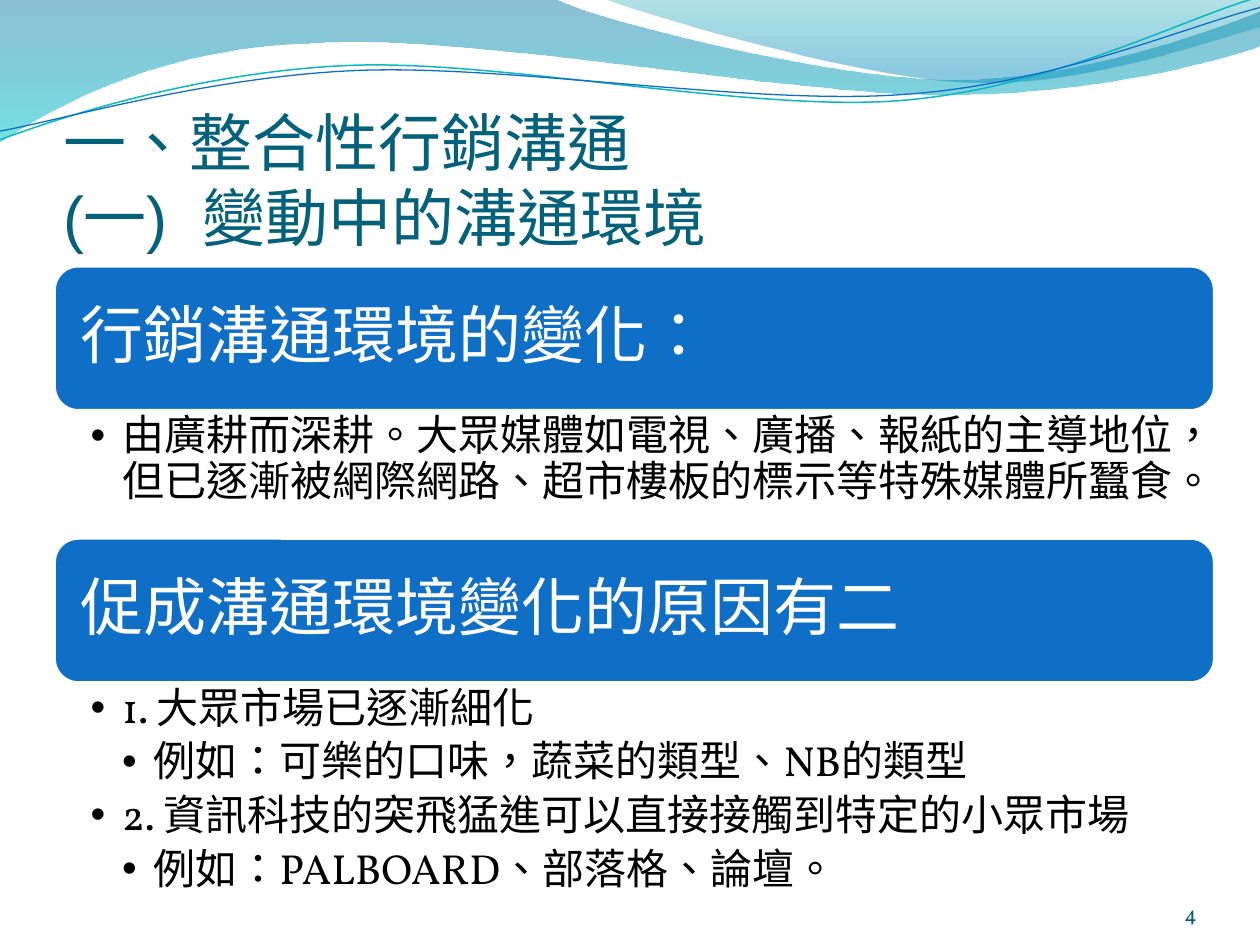
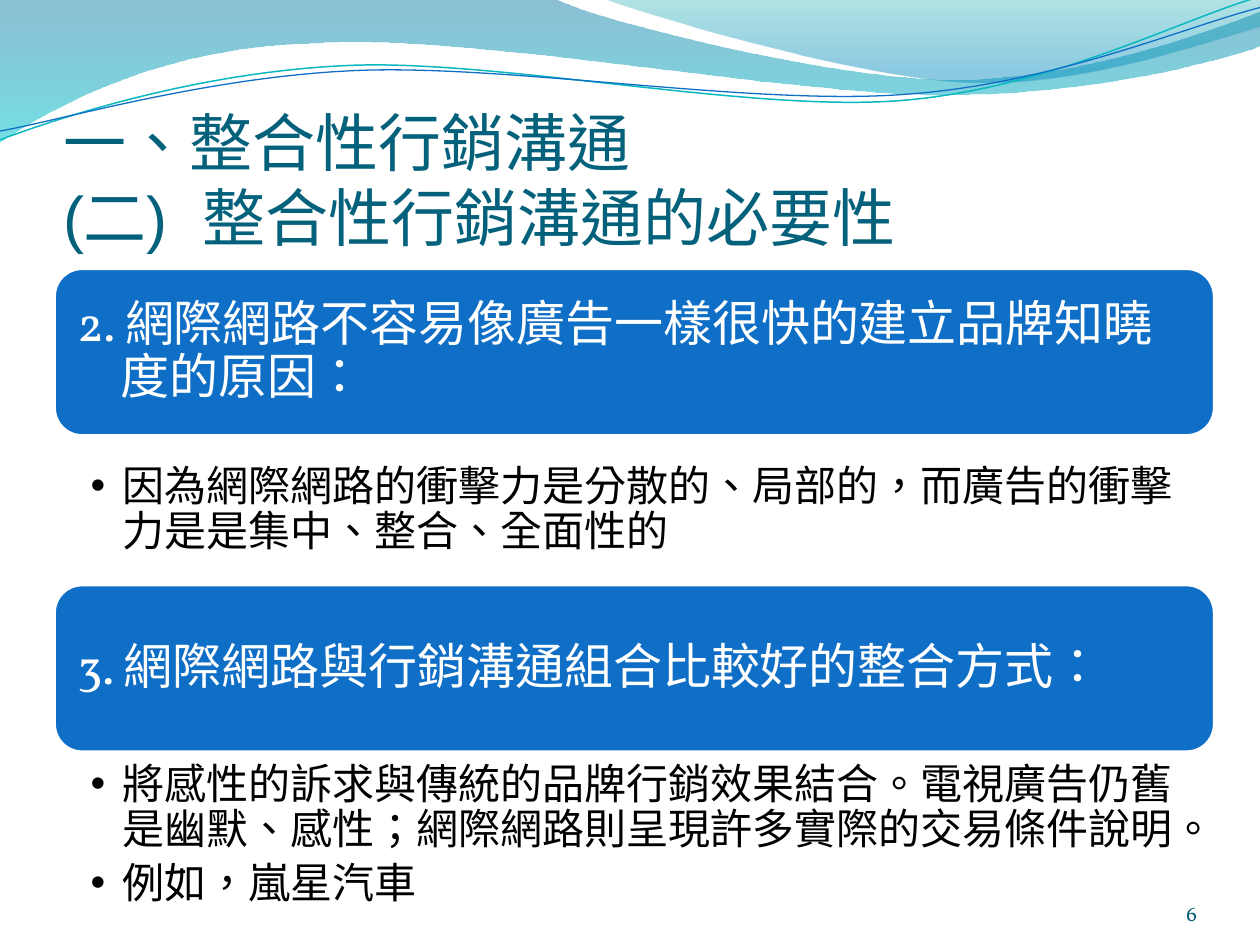
"""Build two slides on integrated marketing communication."""
from itertools import chain, islice

from lxml.etree import SubElement
from pptx import Presentation
from pptx.dml.color import RGBColor
from pptx.enum.lang import MSO_LANGUAGE_ID
from pptx.enum.shapes import MSO_SHAPE
from pptx.enum.text import MSO_ANCHOR, MSO_AUTO_SIZE, PP_ALIGN
from pptx.oxml.ns import qn
from pptx.util import Inches, Pt

TITLE_FONT, BODY_FONT = "Arial", "Vollkorn"
BLUE, TEAL, TITLE_COLOR, NUMBER_COLOR = "0F6FC6", "0AB8BF", "04617B", "045D75"
WHITE, BLACK = "FFFFFF", "000000"
BLOCK_LEFT, BLOCK_WIDTH = 0.43, 9.21

LOWER_BAND = [
    [(0, 0)], [(4.4, -0.01)],
    [(4.76, 0.17), (6.64, 0.63), (7.58, 0.63)],
    [(8.53, 0.63), (9.58, 0.26), (10, 0.09)], [(10.01, 0.36)],
    [(9.83, 0.44), (8.7, 0.76), (7.46, 0.75)],
    [(6.22, 0.75), (3.82, 0.28), (2.57, 0.34)],
    [(1.29, 0.36), (0.46, 0.83), (-0.01, 1.13)], [(0, 0)],
]
UPPER_BAND = [
    [(4.79, -0.01)],
    [(5.09, 0.11), (6.82, 0.62), (7.69, 0.65)],
    [(8.56, 0.69), (9.61, 0.32), (10, 0.21)], [(10, 0)], [(4.79, -0.01)],
]
TEAL_WAVE = [
    [(0, 1.11)],
    [(0.48, 0.93), (1.58, 0.57), (2.77, 0.52)],
    [(3.95, 0.47), (5.93, 0.89), (7.13, 0.8)],
    [(8.33, 0.71), (9.38, 0.15), (9.98, -0.02)],
]
BLUE_WAVE = [
    [(0, 1.04)],
    [(0.47, 0.96), (1.64, 0.61), (2.83, 0.56)],
    [(4.03, 0.51), (5.97, 0.84), (7.17, 0.75)],
    [(8.36, 0.67), (9.41, 0.21), (10, 0.06)],
]

SLIDES = [
    {
        "title": "一、整合性行銷溝通\n(一)  變動中的溝通環境",
        "number": "4", "top": 2.11, "card_height": 1.15, "card_size": 36,
        "inset": 0.15, "anchor": MSO_ANCHOR.TOP,
        "blocks": [
            ("行銷溝通環境的變化：", 1.01, [
                (0, "由廣耕而深耕。大眾媒體如電視、廣播、報紙的主導地位，"
                    "但已逐漸被網際網路、超市樓板的標示等特殊媒體所蠶食。"),
            ]),
            ("促成溝通環境變化的原因有二", 1.9, [
                (0, "1. 大眾市場已逐漸細化"),
                (1, "例如：可樂的口味，蔬菜的類型、NB的類型"),
                (0, "2. 資訊科技的突飛猛進可以直接接觸到特定的小眾市場"),
                (1, "例如：PALBOARD、部落格、論壇。"),
            ]),
        ],
    },
    {
        "title": "一、整合性行銷溝通\n(二)  整合性行銷溝通的必要性",
        "number": "6", "top": 2.13, "card_height": 1.33, "card_size": 28,
        "inset": 0.12, "anchor": MSO_ANCHOR.MIDDLE,
        "blocks": [
            ("2. 網際網路不容易像廣告一樣很快的建立品牌知曉\n度的原因：", 1.18, [
                (0, "因為網際網路的衝擊力是分散的、局部的，"
                    "而廣告的衝擊力是是集中、整合、全面性的"),
            ]),
            ("3. 網際網路與行銷溝通組合比較好的整合方式：", 1.32, [
                (0, "將感性的訴求與傳統的品牌行銷效果結合。電視廣告仍舊"
                    "是幽默、感性；網際網路則呈現許多實際的交易條件說明。"),
                (0, "例如，嵐星汽車"),
            ]),
        ],
    },
]


def rgb(color):
    """Turn a hex string into a colour."""
    return RGBColor.from_string(color)


def place(shape, left, top, width, height):
    """Move and size a shape, in inches."""
    shape.left, shape.top = Inches(left), Inches(top)
    shape.width, shape.height = Inches(width), Inches(height)


def set_frame(frame, anchor, left, top, right, bottom):
    """Set wrapping, anchor and margins of a text frame."""
    frame.word_wrap = True
    frame.auto_size = MSO_AUTO_SIZE.NONE
    frame.vertical_anchor = anchor
    frame.margin_left, frame.margin_right = Inches(left), Inches(right)
    frame.margin_top, frame.margin_bottom = Inches(top), Inches(bottom)


def write(paragraph, text, size, color, font=BODY_FONT, align=PP_ALIGN.LEFT):
    """Add the lines of a text to a paragraph, one run each."""
    paragraph.alignment = align
    for index, line in enumerate(text.split("\n")):
        if index:
            paragraph.add_line_break()
        run = paragraph.add_run()
        run.text = line
        run.font.name, run.font.size = font, Pt(size)
        run.font.color.rgb = rgb(color)
        run.font.language_id = MSO_LANGUAGE_ID.TRADITIONAL_CHINESE


def space(paragraph, after):
    """Set tight lines and the gap after a paragraph."""
    paragraph.line_spacing = 0.9
    paragraph.space_before, paragraph.space_after = Pt(0), Pt(after)


def indent(paragraph, left, first):
    """Set a hanging indent and return the paragraph properties."""
    properties = paragraph._p.get_or_add_pPr()
    properties.set("marL", str(Inches(left)))
    properties.set("indent", str(Inches(first)))
    return properties


def bend(outline, segments):
    """Turn each run of three straight steps into one cubic curve."""
    steps = iter(list(outline.element.iter(qn("a:lnTo"))))
    for segment in segments:
        first, *others = islice(steps, len(segment))
        if others:
            first.tag = qn("a:cubicBezTo")
            for step in others:
                first.append(step[0])
                step.getparent().remove(step)


def add_outline(slide, segments, close):
    """Draw an outline from straight and curved segments."""
    start, *rest = segments
    builder = slide.shapes.build_freeform(*map(Inches, start[0]), scale=1.0)
    points = [tuple(map(Inches, point)) for point in chain.from_iterable(rest)]
    builder.add_line_segments(points, close=close)
    outline = builder.convert_to_shape()
    outline.shadow.inherit = False
    bend(outline, rest)
    return outline


def add_band(slide, segments, stops):
    """Draw a translucent band that fades downwards."""
    band = add_outline(slide, segments, close=True)
    band.line.fill.background()
    band.fill.gradient()
    band.fill.gradient_angle = 270
    for stop, (position, color, _) in zip(band.fill.gradient_stops, stops):
        stop.position = position
        stop.color.rgb = rgb(color)
    tints = list(band.element.spPr.iter(qn("a:srgbClr")))
    for tint, (_, _, opacity) in zip(tints, stops):
        SubElement(tint, qn("a:alpha"), val=str(opacity * 1000))
    return band


def add_wave(slide, segments, color, width):
    """Draw a thin wave line."""
    wave = add_outline(slide, segments, close=False)
    wave.fill.background()
    wave.line.color.rgb, wave.line.width = rgb(color), Pt(width)
    return wave


def decorate_layout(layout, slide):
    """Draw the header on a slide and move it to the layout behind the title."""
    for placeholder in list(layout.placeholders):
        if placeholder.placeholder_format.idx >= 10:
            layout.shapes.element.remove(placeholder.element)
    header = [
        add_band(slide, LOWER_BAND, [(0, "0074A1", 45), (1, "00C6CF", 55)]),
        add_band(slide, UPPER_BAND, [(0, "00A1A9", 30), (0.8, "008BBF", 45)]),
        add_wave(slide, TEAL_WAVE, TEAL, 0.85),
        add_wave(slide, BLUE_WAVE, BLUE, 0.75),
    ]
    for depth, part in enumerate(header, start=2):
        layout.shapes.element.insert(depth, part.element)


def add_title(slide, text):
    """Fill the title placeholder."""
    title = slide.shapes.title
    place(title, 0.5, 0.77, 9.08, 1.25)
    set_frame(title.text_frame, MSO_ANCHOR.BOTTOM, 0, 0.05, 0, 0)
    write(title.text_frame.paragraphs[0], text, 36, TITLE_COLOR, TITLE_FONT)


def add_number(slide, number):
    """Add the page number at the lower right."""
    box = slide.shapes.add_textbox(
        Inches(8.67), Inches(6.95), Inches(0.83), Inches(0.4))
    set_frame(box.text_frame, MSO_ANCHOR.BOTTOM, 0, 0, 0, 0)
    write(box.text_frame.paragraphs[0], number, 12, NUMBER_COLOR,
          align=PP_ALIGN.RIGHT)


def add_card(slide, text, top, height, size, inset):
    """Add a rounded blue heading card."""
    card = slide.shapes.add_shape(
        MSO_SHAPE.ROUNDED_RECTANGLE, Inches(BLOCK_LEFT), Inches(top),
        Inches(BLOCK_WIDTH), Inches(height))
    card.shadow.inherit = False
    card.fill.solid()
    card.fill.fore_color.rgb = rgb(BLUE)
    card.line.color.rgb, card.line.width = rgb(WHITE), Pt(2)
    set_frame(card.text_frame, MSO_ANCHOR.MIDDLE, inset, inset, inset, inset)
    heading = card.text_frame.paragraphs[0]
    space(heading, 0.35 * size)
    if "\n" in text:
        indent(heading, 0.34, -0.34)
    write(heading, text, size, WHITE)


def fill_list(placeholder, items, top, height, anchor):
    """Fill a body placeholder with bulleted items."""
    place(placeholder, BLOCK_LEFT, top, BLOCK_WIDTH, height)
    frame = placeholder.text_frame
    set_frame(frame, anchor, 0.29, 0.03, 0.19, 0.03)
    for index, (level, text) in enumerate(items):
        item = frame.add_paragraph() if index else frame.paragraphs[0]
        item.level = level
        space(item, 4.8)
        properties = indent(item, 0.25 * (level + 1), -0.25)
        SubElement(properties, qn("a:buChar"), char="•")
        write(item, text, 24, BLACK)


def fill_slide(slide, content):
    """Add title, page number and the stacked cards with their lists."""
    add_title(slide, content["title"])
    add_number(slide, content["number"])
    top, card_height = content["top"], content["card_height"]
    for body, (heading, list_height, items) in enumerate(content["blocks"], start=1):
        add_card(slide, heading, top, card_height,
                 content["card_size"], content["inset"])
        top += card_height
        fill_list(slide.placeholders[body], items, top, list_height,
                  content["anchor"])
        top += list_height


def main():
    """Build and save the presentation."""
    deck = Presentation()
    deck.slide_width, deck.slide_height = Inches(10), Inches(7.5)
    layout = deck.slide_layouts[3]
    slides = [deck.slides.add_slide(layout) for _ in SLIDES]
    decorate_layout(layout, slides[0])
    for slide, content in zip(slides, SLIDES):
        fill_slide(slide, content)
    deck.save("out.pptx")


if __name__ == "__main__":
    main()
